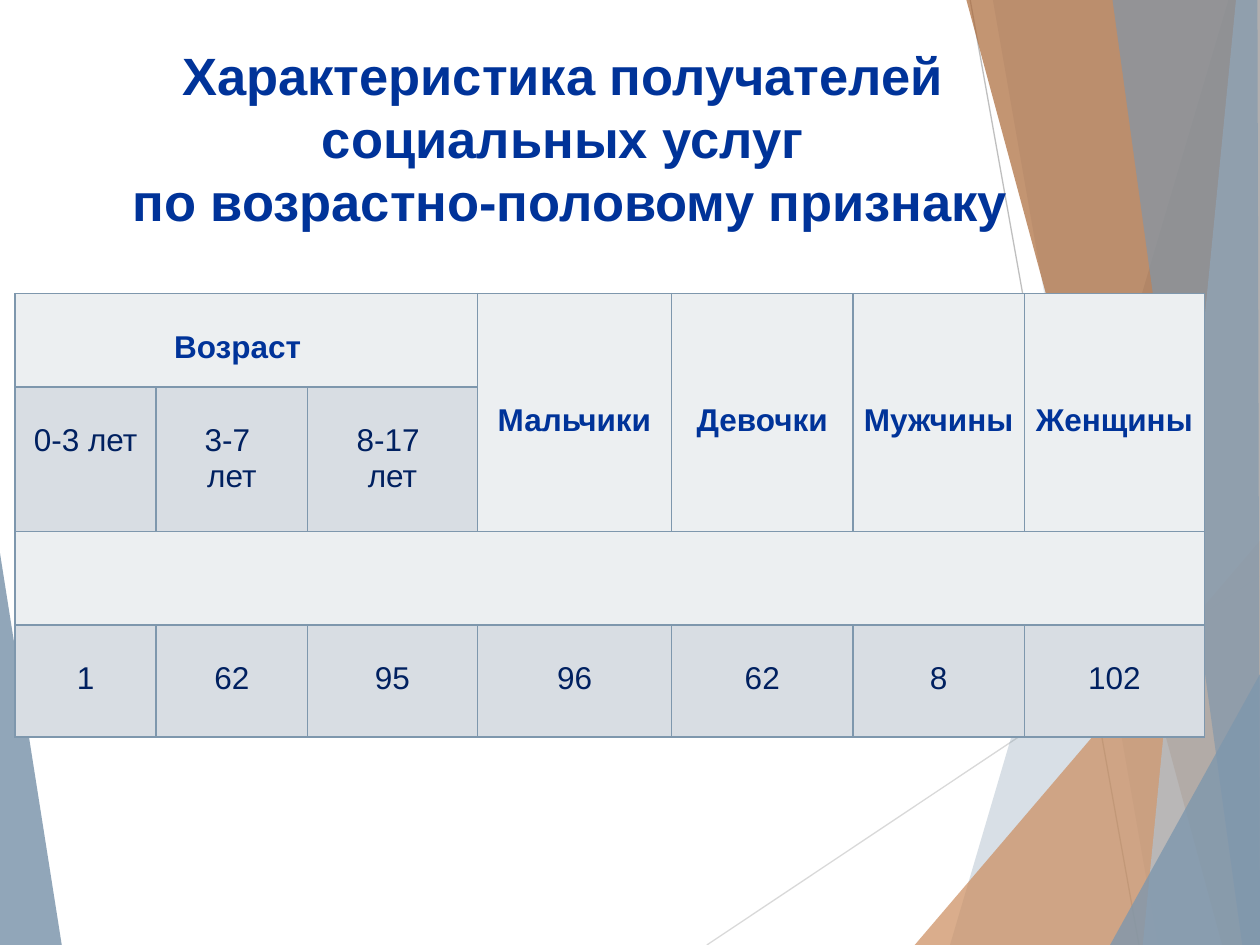
from itertools import accumulate
from lxml.etree import SubElement
from pptx import Presentation
from pptx.dml.color import RGBColor
from pptx.enum.shapes import MSO_CONNECTOR
from pptx.enum.text import MSO_ANCHOR, PP_ALIGN
from pptx.oxml.ns import qn
from pptx.util import Inches, Pt

STEEL = RGBColor(0x7E, 0x97, 0xAD)
MIST = RGBColor(0xB2, 0xC1, 0xCE)
SAND = RGBColor(0xCC, 0x8E, 0x60)
RUST = RGBColor(0xAA, 0x68, 0x37)
SILVER = RGBColor(0xD9, 0xD9, 0xD9)
GREY = RGBColor(0xBF, 0xBF, 0xBF)
BLUE = RGBColor(0x00, 0x33, 0x99)
NAVY = RGBColor(0x00, 0x20, 0x60)
LIGHT = RGBColor(0xEC, 0xEF, 0xF1)
DARK = RGBColor(0xD8, 0xDD, 0xE3)
FONT = "Arial"
WIDE, HIGH = 10, 7.5

TITLE = ["Характеристика получателей ", "социальных услуг ",
         "по возрастно-половому признаку"]
AGES = [["0-3 лет"], ["3-7 ", "лет"], ["8-17 ", "лет"]]
GROUPS = ["Мальчики", "Девочки", "Мужчины ", "Женщины "]
COUNTS = [1, 62, 95, 96, 62, 8, 102]
COLS = [1.12, 1.2, 1.35, 1.54, 1.44, 1.36, 1.43]
ROWS = [0.74, 1.12, 0.74, 0.89]
LINE = 0.29  # height of one 18 pt line

LEFT_SHARD = (STEEL, 85, [(0, 4.39), (0.49, HIGH), (0, HIGH)])
RAYS = [(SILVER, (5.61, HIGH), (WIDE, 4.57)), (GREY, (7.7, 0), (9.04, HIGH))]
SHARDS = [
    (STEEL, 30, [(9.75, 0), (7.54, HIGH), (WIDE, HIGH), (WIDE, 0)]),
    (STEEL, 20, [(7.88, 0), (9.19, HIGH), (WIDE, HIGH), (WIDE, 0)]),
    (SAND, 72, [(7.26, HIGH), (WIDE, 4.29), (WIDE, HIGH)]),
    (RUST, 70, [(7.67, 0), (9.7, HIGH), (WIDE, HIGH), (WIDE, 0)]),
    (MIST, 70, [(9.81, 0), (9.07, HIGH), (WIDE, HIGH), (WIDE, 0)]),
    (STEEL, 65, [(8.83, 0), (9.86, HIGH), (WIDE, HIGH), (9.98, 0)]),
    (STEEL, 80, [(8.81, HIGH), (WIDE, 5.35), (WIDE, HIGH)]),
]


def add_shard(shapes, color, alpha, points):
    start, *rest = [(Inches(x), Inches(y)) for x, y in points]
    pen = shapes.build_freeform(*start)
    pen.add_line_segments(rest)
    shard = pen.convert_to_shape()
    shard.shadow.inherit = False
    shard.fill.solid()
    shard.fill.fore_color.rgb = color
    shard.line.fill.background()
    tint = shard._element.spPr.find(f"{qn('a:solidFill')}/{qn('a:srgbClr')}")
    SubElement(tint, qn("a:alpha"), val=str(alpha * 1000))


def add_ray(shapes, color, start, end):
    ray = shapes.add_connector(MSO_CONNECTOR.STRAIGHT,
                               *[Inches(v) for v in start + end])
    ray.line.color.rgb = color
    ray.line.width = Pt(0.75)
    SubElement(ray._element.spPr, qn("a:effectLst"))


def write(par, text, size, color, bold):
    par.alignment = PP_ALIGN.CENTER
    run = par.add_run()
    run.text = text
    font = run.font
    font.name, font.size, font.bold = FONT, Pt(size), bold
    font.color.rgb = color


def style_cell(cell, fill):
    props = cell._tc.get_or_add_tcPr()
    for side in ("lnL", "lnR", "lnT", "lnB"):
        edge = SubElement(props, qn(f"a:{side}"), w=str(Pt(1)))
        paint = SubElement(edge, qn("a:solidFill"))
        SubElement(paint, qn("a:srgbClr"), val=str(STEEL))
    cell.fill.solid()
    cell.fill.fore_color.rgb = fill


def fill_cell(cell, lines, drop=1, color=NAVY, bold=False):
    """Write lines, starting the given number of text lines below the top."""
    cell.margin_left = cell.margin_right = Inches(0.07)
    cell.margin_top, cell.margin_bottom = Inches(drop * LINE), 0
    frame = cell.text_frame
    for i, line in enumerate(lines):
        par = frame.add_paragraph() if i else frame.paragraphs[0]
        write(par, line, 18, color, bold)


def add_title(slide):
    title = slide.shapes.title
    title.left, title.top = Inches(-0.2), Inches(0.29)
    title.width, title.height = Inches(9.45), Inches(1.44)
    frame = title.text_frame
    frame.word_wrap = True
    frame.vertical_anchor = MSO_ANCHOR.TOP
    par = frame.paragraphs[0]
    par.line_spacing = Pt(36)
    for i, line in enumerate(TITLE):
        if i:
            par.add_line_break()
        write(par, line, 30, BLUE, True)
    slide.shapes._spTree.append(title._element)  # in front of the shards


def add_grid(shapes):
    table = shapes.add_table(
        len(ROWS), len(COLS), Inches(0.12), Inches(2.33),
        Inches(sum(COLS)), Inches(sum(ROWS))).table
    table.first_row = table.horz_banding = False
    for col, width in zip(table.columns, COLS):
        col.width = Inches(width)
    for row, height in zip(table.rows, ROWS):
        row.height = Inches(height)
    ages, last = len(AGES), len(COLS) - 1
    for r in range(len(ROWS)):
        for c in range(len(COLS)):
            dark = r == 3 or (r == 1 and c < ages)
            style_cell(table.cell(r, c), DARK if dark else LIGHT)
    table.cell(0, 0).merge(table.cell(0, ages - 1))
    table.cell(2, 0).merge(table.cell(2, last))
    fill_cell(table.cell(0, 0), ["Возраст  "], color=BLUE, bold=True)
    for c, lines in enumerate(AGES):
        fill_cell(table.cell(1, c), lines)
    for c, name in enumerate(GROUPS, ages):
        table.cell(0, c).merge(table.cell(1, c))
        fill_cell(table.cell(0, c), [name], 3, BLUE, True)
    for c, count in enumerate(COUNTS):
        fill_cell(table.cell(3, c), [str(count)])


def main():
    deck = Presentation()
    deck.slide_width, deck.slide_height = Inches(WIDE), Inches(HIGH)
    slide = deck.slides.add_slide(deck.slide_layouts[5])
    shapes = slide.shapes
    add_shard(shapes, *LEFT_SHARD)
    for ray in RAYS:
        add_ray(shapes, *ray)
    for shard in SHARDS:
        add_shard(shapes, *shard)
    add_title(slide)
    add_grid(shapes)
    deck.save("out.pptx")


if __name__ == "__main__":
    main()
